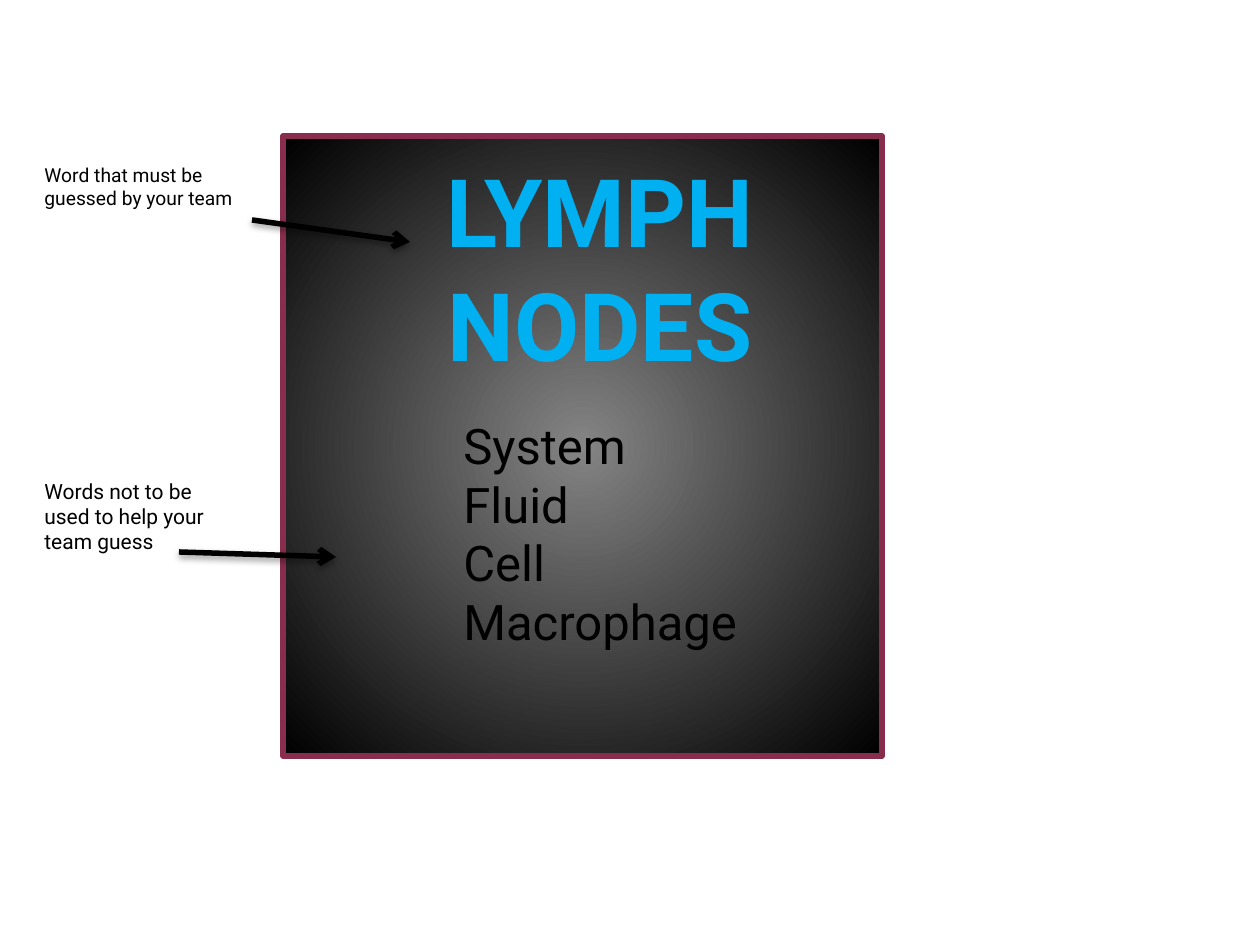
"""Build a guessing-game card for lymph nodes with two labelled arrows."""
from lxml.etree import SubElement
from pptx import Presentation
from pptx.dml.color import RGBColor
from pptx.enum.shapes import MSO_CONNECTOR, MSO_SHAPE
from pptx.enum.text import MSO_AUTO_SIZE, PP_ALIGN
from pptx.oxml import parse_xml
from pptx.oxml.ns import nsdecls, qn
from pptx.util import Emu, Pt

SCALE = 914400 / 126
BLACK = RGBColor(0x00, 0x00, 0x00)
GREY = RGBColor(0x84, 0x84, 0x84)
MAROON = RGBColor(0x88, 0x2D, 0x4D)
SKY = RGBColor(0x00, 0xB0, 0xF0)
NAVY = RGBColor(0x00, 0x20, 0x60)


def px(*lengths):
    return [Emu(round(length * SCALE)) for length in lengths]


def add_text(shapes, place, text, size, color=BLACK):
    box = shapes.add_textbox(*px(*place))
    frame = box.text_frame
    frame.word_wrap = True
    frame.auto_size = MSO_AUTO_SIZE.SHAPE_TO_FIT_TEXT
    frame.text = text
    for para in frame.paragraphs:
        for span in para.runs:
            span.font.name = "Roboto"
            span.font.size = Pt(size)
            span.font.color.rgb = color
    return box


deck = Presentation()
deck.slide_width, deck.slide_height = px(1260, 945)
page = deck.slides.add_slide(deck.slide_layouts[6])

card = page.shapes.add_group_shape()
panel = card.shapes.add_shape(MSO_SHAPE.RECTANGLE, *px(283, 136, 599, 620))
panel.shadow.inherit = False
panel.line.color.rgb = MAROON
panel.line.width = Pt(3.15)
panel.fill.gradient()
for stop, color in zip(panel.fill.gradient_stops, (GREY, BLACK)):
    stop.color.rgb = color
linear = panel.element.spPr.find(qn("a:gradFill")).find(qn("a:lin"))
linear.getparent().replace(linear, parse_xml(
    f'<a:path {nsdecls("a")} path="circle">'
    '<a:fillToRect l="50000" t="50000" r="50000" b="50000"/></a:path>'))

add_text(card.shapes, (451, 409, 305, 310), "System\nFluid\nCell\nMacrophage", 28)
title = add_text(card.shapes, (297, 147, 606, 242), "LYMPH NODES", 54, SKY)
heading = title.text_frame.paragraphs[0]
heading.alignment = PP_ALIGN.CENTER
heading.runs[0].font.bold = True
heading.runs[0].font._element.insert(0, parse_xml(
    f'<a:ln {nsdecls("a")} w="{Pt(0.83)}"><a:solidFill>'
    f'<a:srgbClr val="{NAVY}"/></a:solidFill></a:ln>'))

add_text(page.shapes, (32, 157, 220, 59), "Word that must be guessed by your team", 11)
add_text(page.shapes, (32, 472, 220, 89), "Words not to be used to help your team guess", 12)

for ends in ((252, 220, 410, 242), (179, 552, 336, 557)):
    arrow = page.shapes.add_connector(MSO_CONNECTOR.STRAIGHT, *px(*ends))
    arrow.line.color.rgb = BLACK
    arrow.line.width = Pt(3.15)
    SubElement(arrow.line._get_or_add_ln(), qn("a:tailEnd"), type="arrow")
    arrow.element.spPr.append(parse_xml(
        f'<a:effectLst {nsdecls("a")}><a:outerShdw blurRad="{Pt(4)}" '
        f'dist="{Pt(2)}" dir="5400000" rotWithShape="0"><a:srgbClr val="{BLACK}">'
        '<a:alpha val="38000"/></a:srgbClr></a:outerShdw></a:effectLst>'))

deck.save("out.pptx")
